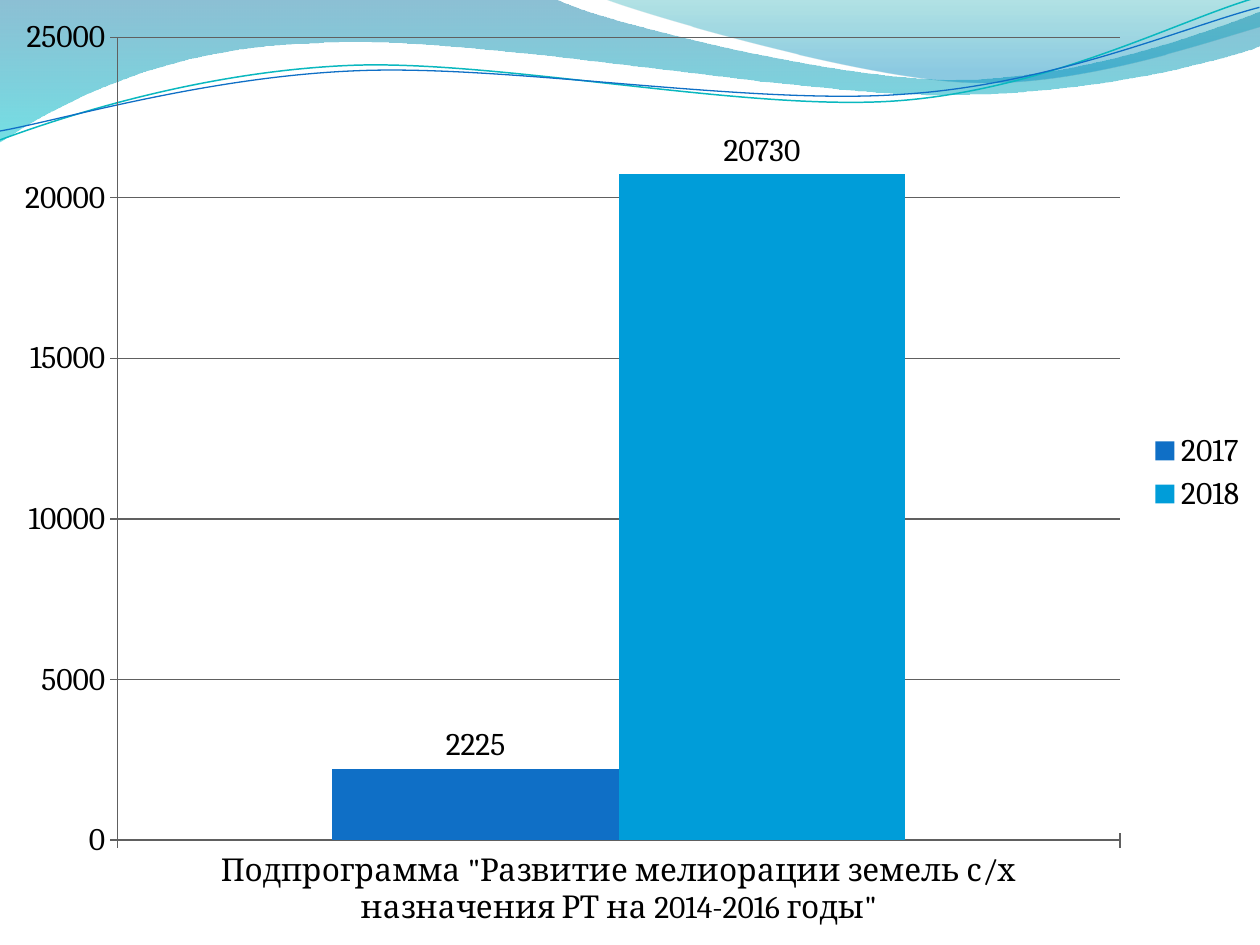
"""Builds a slide with a wave header and a column chart of programme funding for 2017 and 2018."""
from lxml.etree import SubElement
from pptx import Presentation
from pptx.chart.data import CategoryChartData
from pptx.dml.color import RGBColor
from pptx.enum.chart import XL_CHART_TYPE, XL_LABEL_POSITION, XL_LEGEND_POSITION, XL_TICK_MARK
from pptx.oxml.ns import qn
from pptx.util import Inches, Pt

COLORS = {
    "deep": "0074A1", "aqua": "00C6CF", "teal": "00A1A9", "sky": "008BBF",
    "line": "0AB8BF", "2017": "0F6FC6", "2018": "009DD9",
    "text": "000000", "grid": "606060",
}
COLS, ROWS = 1000, 750


def color(name):
    return RGBColor.from_string(COLORS[name])


def add_wave(slide, start, segments, close):
    points = [seg[i:i + 2] for seg in segments for i in range(0, len(seg), 2)]
    builder = slide.shapes.build_freeform(round(start[0] * col), round(start[1] * row), scale=1.0)
    builder.add_line_segments([(round(x * col), round(y * row)) for x, y in points], close=close)
    sp = builder.convert_to_shape()
    sp.shadow.inherit = False
    lines = iter(list(sp.element.iter(qn("a:lnTo"))))
    for seg in segments:
        parts = [next(lines) for i in range(0, len(seg), 2)]
        if len(parts) == 3:
            parts[0].addprevious(curve := SubElement(parts[0].getparent(), qn("a:cubicBezTo")))
            for part in parts:
                curve.append(part[0])
                part.getparent().remove(part)
    return sp


prs = Presentation()
prs.slide_width, prs.slide_height = Inches(10), Inches(7.5)
col, row = prs.slide_width / COLS, prs.slide_height / ROWS
slide = prs.slides.add_slide(prs.slide_layouts[6])

bands = [
    ((0, -1),
     [(440, -1), (476, 17, 664, 63, 758, 63), (853, 63, 958, 26, 1000, 9), (1001, 36),
      (983, 44, 870, 76, 746, 75), (622, 75, 382, 28, 257, 34), (129, 36, 46, 83, -1, 113),
      (0, -1)],
     [("deep", 0, 45), ("aqua", 1, 55)]),
    ((479, -1),
     [(509, 11, 682, 62, 769, 65), (856, 69, 961, 32, 1000, 21), (1000, 0), (479, -1)],
     [("teal", 0, 30), ("sky", 0.8, 45)]),
]
for start, segments, stops in bands:
    sp = add_wave(slide, start, segments, True)
    sp.line.fill.background()
    sp.fill.gradient()
    sp.fill.gradient_angle = 270
    for stop, (name, position, opacity) in zip(sp.fill.gradient_stops, stops):
        stop.color.rgb = color(name)
        stop.position = position
    for clr, (name, position, opacity) in zip(sp.element.spPr.iter(qn("a:srgbClr")), stops):
        SubElement(clr, qn("a:alpha")).set("val", str(opacity * 1000))

strands = [
    ((-2, 87.5),
     [(47, 72, 158, 41, 277.5, 41.5), (395.5, 42, 591.5, 93.5, 712, 90),
      (832, 86.5, 939.5, 35.5, 1000, 21.5)], "line", 0.85),
    ((-2, 80.5),
     [(45.5, 74.5, 164.5, 45, 283.5, 46), (403.5, 46.5, 595.5, 88.5, 716, 85),
      (835, 83, 942, 42, 1001.5, 29.5)], "2017", 0.75),
]
for start, segments, name, width in strands:
    sp = add_wave(slide, start, segments, False)
    sp.rotation = 357.3
    sp.fill.background()
    sp.line.color.rgb = color(name)
    sp.line.width = Pt(width)

data = CategoryChartData()
data.categories = ['Подпрограмма "Развитие мелиорации земель с/х назначения РТ на 2014-2016 годы"']
for year, value in (("2017", 2225), ("2018", 20730)):
    data.add_series(year, [value])
chart = slide.shapes.add_chart(
    XL_CHART_TYPE.COLUMN_CLUSTERED, 0, 0, prs.slide_width, prs.slide_height, data).chart
chart.has_title = False
chart.font.name = "Cambria"
chart.font.size = Pt(18)
chart.font.color.rgb = color("text")
chart.has_legend = True
chart.legend.position = XL_LEGEND_POSITION.RIGHT
chart.legend.include_in_layout = False

plot = chart.plots[0]
plot.gap_width, plot.overlap = 150, 0
plot.vary_by_categories = False
for series in plot.series:
    series.format.fill.solid()
    series.format.fill.fore_color.rgb = color(series.name)
    labels = series.data_labels
    labels.show_value = True
    labels.position = XL_LABEL_POSITION.OUTSIDE_END

chart.value_axis.has_major_gridlines = True
for axis in (chart.category_axis, chart.value_axis):
    axis.major_tick_mark = XL_TICK_MARK.CROSS
for part in (chart.category_axis, chart.value_axis, chart.value_axis.major_gridlines):
    part.format.line.color.rgb = color("grid")
    part.format.line.width = Pt(0.75)

prs.save("out.pptx")
